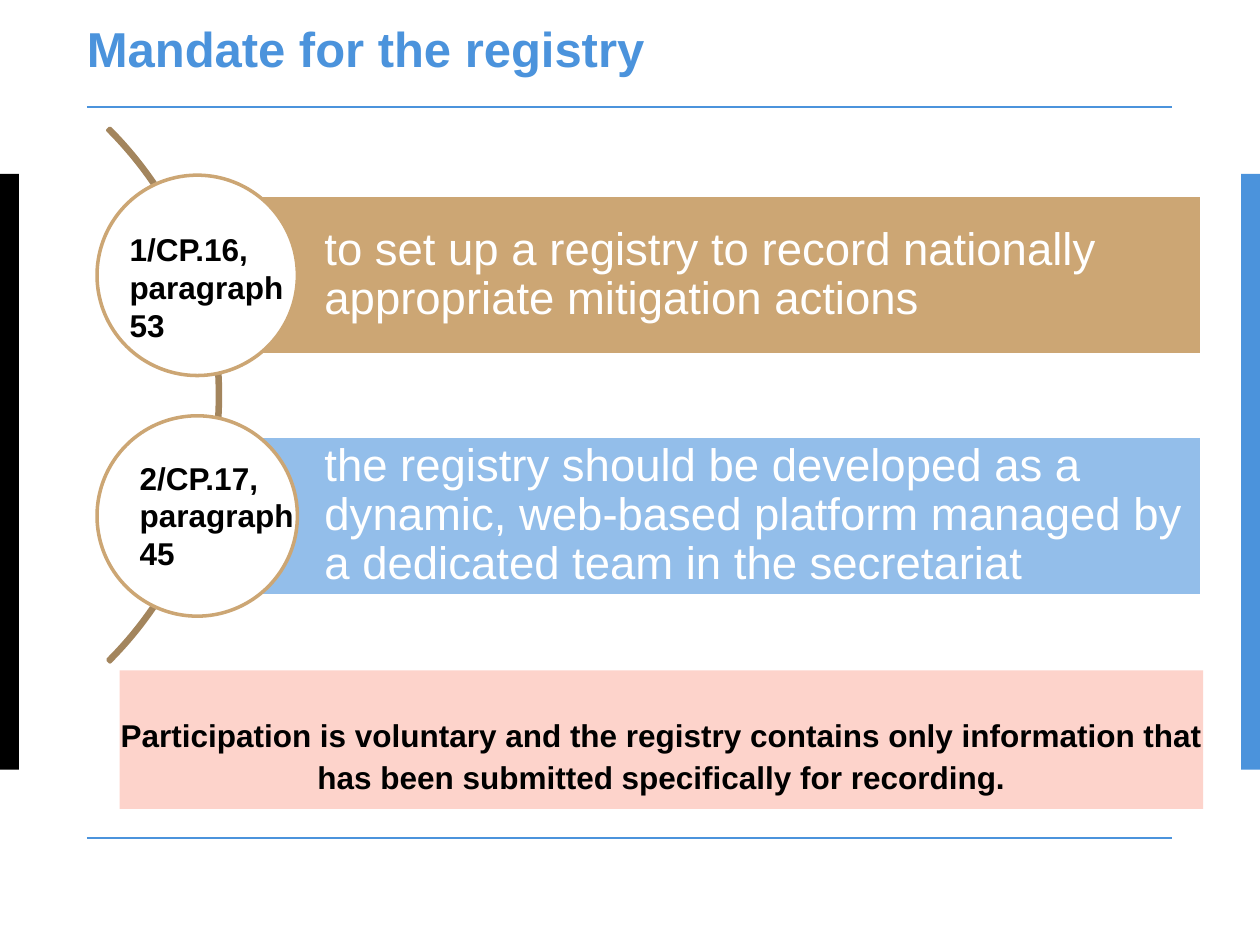
"""Build the slide on the mandate for the registry."""
import pptx
import pptx.util
import pptx.dml.color
import pptx.enum.shapes
import pptx.enum.text
from lxml import etree

RGB = pptx.dml.color.RGBColor
BLUE = RGB(0x4B, 0x93, 0xDC)
SKY = RGB(0x93, 0xBE, 0xEA)
TAN = RGB(0xCC, 0xA6, 0x74)
BROWN = RGB(0xA3, 0x85, 0x5D)
PINK = RGB(0xFD, 0xD3, 0xCB)
BLACK = RGB(0, 0, 0)
WHITE = RGB(255, 255, 255)

KIND = pptx.enum.shapes.MSO_SHAPE
ALIGN = pptx.enum.text.PP_ALIGN
ANCHOR = pptx.enum.text.MSO_ANCHOR
Inches, Pt = pptx.util.Inches, pptx.util.Pt

TITLE = "Mandate for the registry"
NOTE = ("Participation is voluntary and the registry contains only information "
        "that has been submitted specifically for recording.")
ROWS = [
    ("1/CP.16, paragraph 53", TAN, (0.16, 0.39, 1.63),
     "to set up a registry to record nationally appropriate mitigation actions"),
    ("2/CP.17, paragraph 45", SKY, (0.24, 0.29, 1.47),
     "the registry should be developed as a dynamic, web-based platform "
     "managed by a dedicated team in the secretariat"),
]

WIDE, HIGH = 10, 7.5
LEFT, RIGHT = 0.69, 9.3
EDGE = 0.15
DISC, BAR = 1.59, 1.27
DISC_X, TOP, STEP = 0.77, 1.39, 1.91
BAR_END = 9.54
ARC = 5.99


def place(box):
    return [Inches(n) for n in box]


def draw(slide, kind, box, fill=None, line=None):
    shape = slide.shapes.add_shape(kind, *place(box))
    shape.shadow.inherit = False
    if fill is None:
        shape.fill.background()
    else:
        shape.fill.solid()
        shape.fill.fore_color.rgb = fill
    if line is None:
        shape.line.fill.background()
    else:
        shape.line.color.rgb = line
        shape.line.width = Pt(2)
    return shape


def rule(slide, y):
    line = slide.shapes.add_connector(
        pptx.enum.shapes.MSO_CONNECTOR.STRAIGHT, *place((LEFT, y, RIGHT, y)))
    line.line.color.rgb = BLUE
    line.line.width = Pt(1)
    etree.SubElement(line._element.spPr, pptx.oxml.ns.qn("a:effectLst"))


def write(shape, text, size, color, bold=True, pads=(0, 0, 0, 0),
          anchor=ANCHOR.TOP, align=ALIGN.LEFT, space=None):
    frame = shape.text_frame
    frame.word_wrap = True
    frame.auto_size = pptx.enum.text.MSO_AUTO_SIZE.NONE
    frame.vertical_anchor = anchor
    (frame.margin_left, frame.margin_top,
     frame.margin_right, frame.margin_bottom) = place(pads)
    frame.text = text
    para = frame.paragraphs[0]
    para.alignment = align
    para.line_spacing = space
    font = para.font
    font.name, font.size, font.bold = "Arial", Pt(size), bold
    font.color.rgb = color


def add_row(slide, index, row):
    label, color, (dx, dy, width), text = row
    y = TOP + index * STEP
    mid = DISC_X + DISC / 2
    bar = draw(slide, KIND.RECTANGLE,
               (mid, y + (DISC - BAR) / 2, BAR_END - mid, BAR), color, WHITE)
    write(bar, text, 26, WHITE, False, (1.01, 0.07, 0.07, 0.07),
          ANCHOR.MIDDLE, space=0.9)
    draw(slide, KIND.OVAL, (DISC_X, y, DISC, DISC), WHITE, TAN)
    tag = slide.shapes.add_textbox(*place((DISC_X + dx, y + dy, width, 1.01)))
    write(tag, label, 18, BLACK, pads=(0.1, 0.05, 0.1, 0.05))


def main():
    deck = pptx.Presentation()
    deck.slide_width, deck.slide_height = place((WIDE, HIGH))
    slide = deck.slides.add_slide(deck.slide_layouts.get_by_name("Title Only"))

    for x, color in ((0, BLACK), (WIDE - EDGE, BLUE)):
        draw(slide, KIND.RECTANGLE, (x, 1.38, EDGE, 4.73), color)
    for y in (0.85, 6.65):
        rule(slide, y)

    title = slide.shapes.title
    title.left, title.top, title.width, title.height = place(
        (LEFT, 0.34, RIGHT - LEFT, 0.34))
    write(title, TITLE, 28, BLUE, anchor=ANCHOR.MIDDLE, space=Pt(15))

    note = draw(slide, KIND.RECTANGLE, (0.95, 5.32, 8.6, 1.1), PINK)
    write(note, NOTE, 18, BLACK, pads=(0, 0.33, 0, 0),
          align=ALIGN.CENTER, space=Pt(24))

    arc = draw(slide, KIND.BLOCK_ARC, (-4.24, 0.14, ARC, ARC), line=BROWN)
    for i, value in enumerate((189, 27, 0.004)):
        arc.adjustments[i] = value

    for index, row in enumerate(ROWS):
        add_row(slide, index, row)
    deck.save("out.pptx")


if __name__ == "__main__":
    main()
